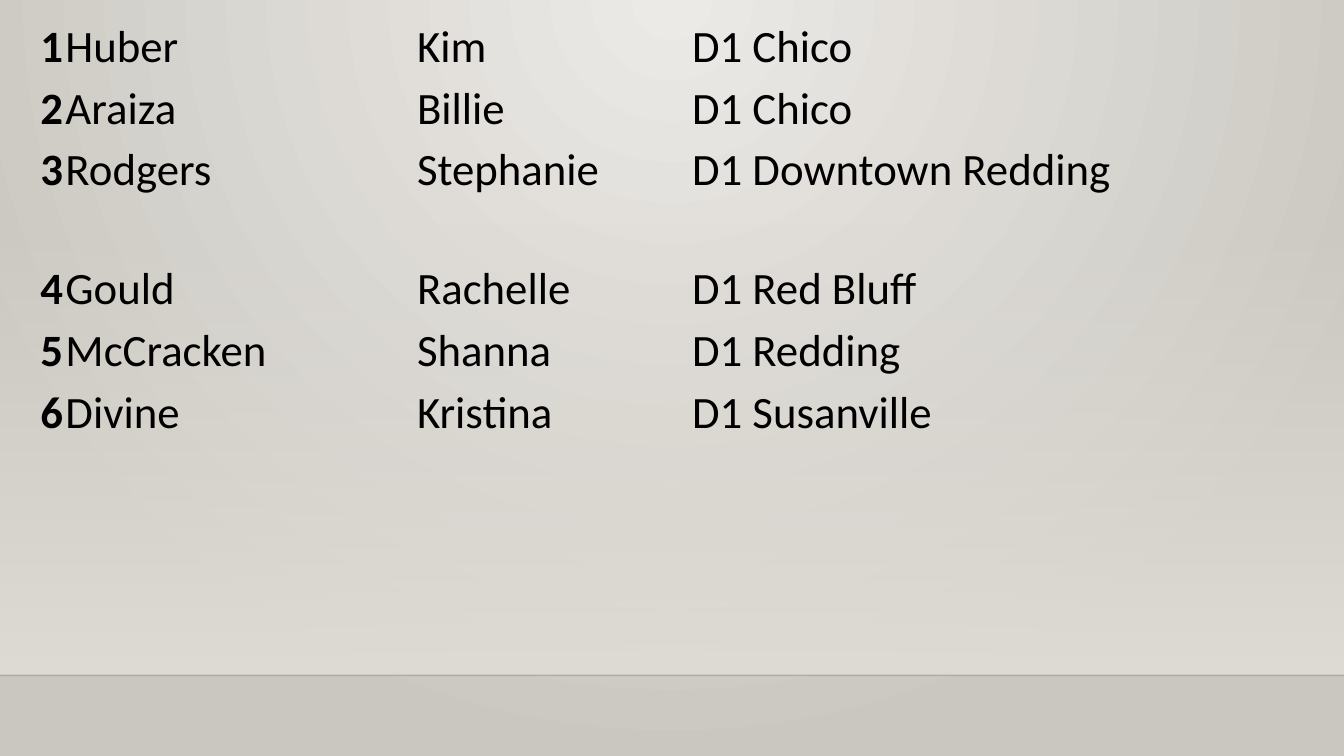
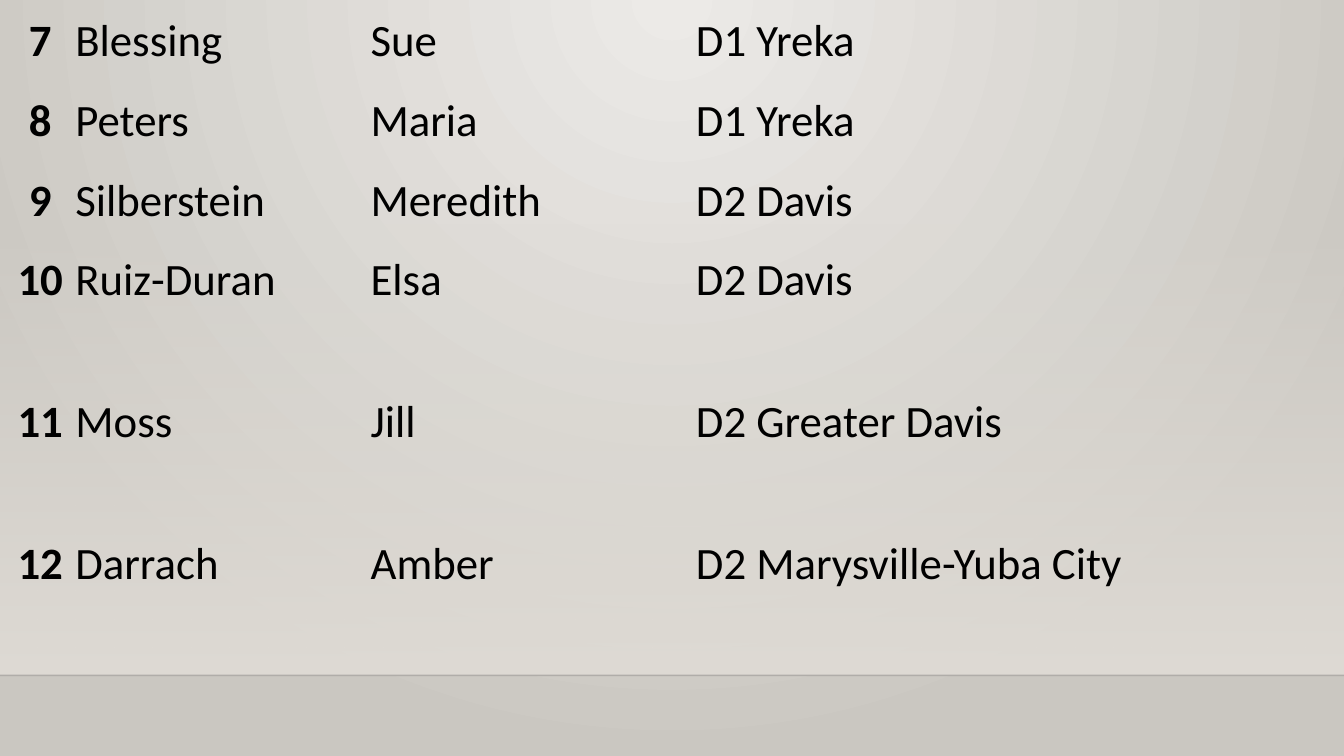
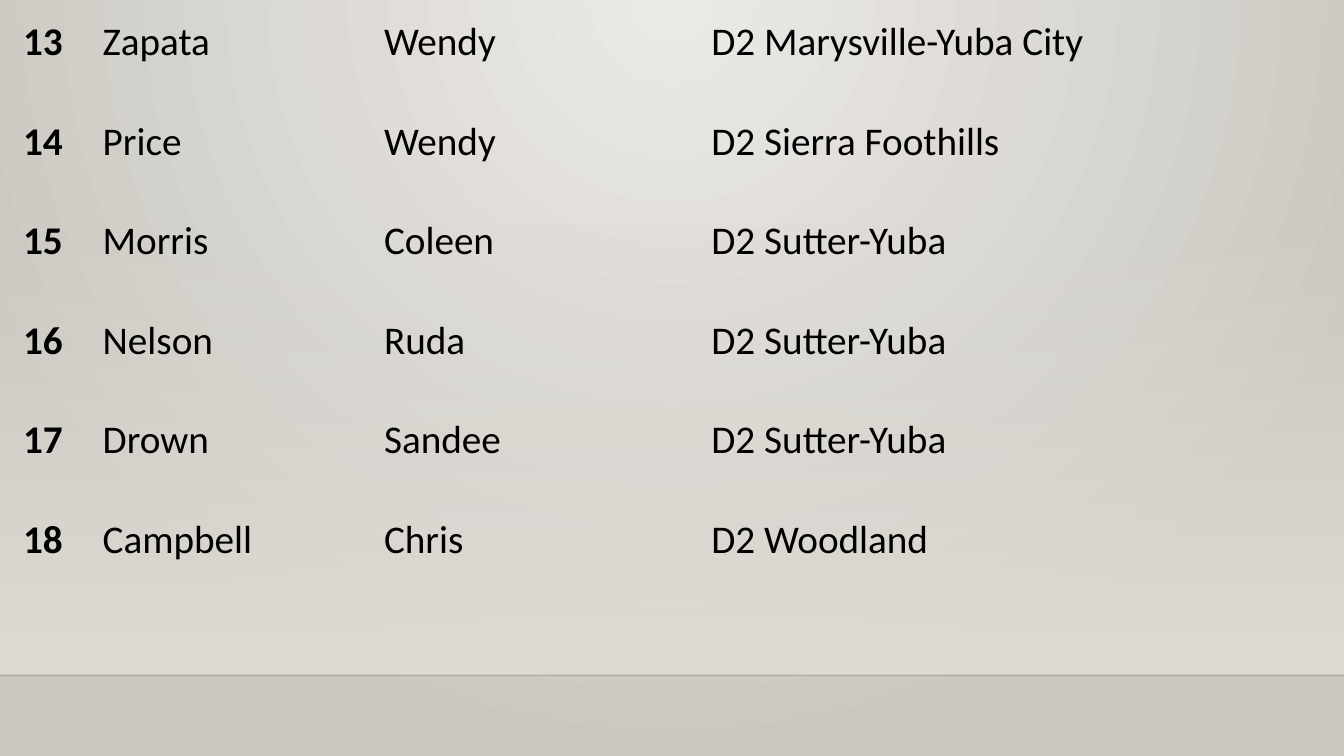
"""Roster of names and districts on three slides over a shared softly lit backdrop."""
from lxml.etree import SubElement
from pptx import Presentation
from pptx.dml.color import RGBColor
from pptx.enum.shapes import MSO_CONNECTOR, MSO_SHAPE
from pptx.enum.text import PP_ALIGN
from pptx.oxml.ns import qn
from pptx.util import Cm, Pt

COLORS = {"glow": "ECEAE7", "edge": "CAC7C1", "wall": "DFDBD5",
          "floor_line": "000001", "text": "000000"}
FONT = "Calibri"
WIDTH, HEIGHT = Cm(33.87), Cm(19.05)
WALL_TOP, FLOOR = Cm(5.61), Cm(17.02)
NO_GRID_STYLE = "{2D5ABB26-0587-4C30-8999-92F81FD0307C}"

ROSTERS = [
    {
        "people": [
            ("Huber", "Kim", "D1 Chico"),
            ("Araiza", "Billie", "D1 Chico"),
            ("Rodgers", "Stephanie", "D1 Downtown Redding"),
            ("Gould", "Rachelle", "D1 Red Bluff"),
            ("McCracken", "Shanna", "D1 Redding"),
            ("Divine", "Kristina", "D1 Susanville"),
        ],
        "corner": (0.94, 0.43),
        "columns": [0.63, 8.86, 6.93, 15.42, 1.55],
        "rows": [1.55, 1.55, 3, 1.55, 1.55, 1.73] + [0.89] * 6,
        "inset": 0.08, "size": 32, "number_align": PP_ALIGN.CENTER,
    },
    {
        "people": [
            ("Blessing", "Sue", "D1 Yreka"),
            ("Peters", "Maria", "D1 Yreka"),
            ("Silberstein", "Meredith", "D2 Davis"),
            ("Ruiz-Duran", "Elsa", "D2 Davis"),
            ("Moss", "Jill", "D2 Greater Davis"),
            ("Darrach", "Amber", "D2 Marysville-Yuba City"),
        ],
        "corner": (0.23, 0.25),
        "columns": [1.57, 7.44, 8.2, 12.32, 4.09],
        "rows": [2.01] * 3 + [3.58] * 3,
        "inset": 0.1, "size": 32, "number_align": PP_ALIGN.CENTER,
    },
    {
        "people": [
            ("Zapata", "Wendy", "D2 Marysville-Yuba City"),
            ("Price", "Wendy", "D2 Sierra Foothills"),
            ("Morris", "Coleen", "D2 Sutter-Yuba"),
            ("Nelson", "Ruda", "D2 Sutter-Yuba"),
            ("Drown", "Sandee", "D2 Sutter-Yuba"),
            ("Campbell", "Chris", "D2 Woodland"),
        ],
        "corner": (0.48, 0.36),
        "columns": [2.01, 7.09, 8.25, 10.01, 6.5],
        "rows": [2.51] * 6,
        "inset": 0.1, "size": 28, "number_align": PP_ALIGN.LEFT,
    },
]


def rgb(name):
    return RGBColor.from_string(COLORS[name])


def set_gradient(fill, *names):
    fill.gradient()
    for stop, name in zip(fill.gradient_stops, names):
        stop.color.rgb = rgb(name)


def set_alpha(element, percent):
    color = element.find(".//" + qn("a:srgbClr"))
    SubElement(color, qn("a:alpha"), val=str(percent * 1000))


def draw_backdrop(slide):
    set_gradient(slide.background.fill, "glow", "edge")
    gradient = slide.element.find(".//" + qn("a:gradFill"))
    gradient.remove(gradient.find(qn("a:lin")))
    circle = SubElement(gradient, qn("a:path"), path="circle")
    SubElement(circle, qn("a:fillToRect"), l="43000", t="0", r="43000", b="100000")

    wall = slide.shapes.add_shape(MSO_SHAPE.RECTANGLE, 0, WALL_TOP, WIDTH, FLOOR - WALL_TOP)
    wall.shadow.inherit = False
    wall.line.fill.background()
    set_gradient(wall.fill, "wall", "wall")
    wall.fill.gradient_angle = 270
    set_alpha(wall.element, 0)

    floor_line = slide.shapes.add_connector(MSO_CONNECTOR.STRAIGHT, 0, FLOOR, WIDTH, FLOOR)
    floor_line.line.color.rgb = rgb("floor_line")
    floor_line.line.width = Pt(1)
    set_alpha(floor_line.element, 20)
    SubElement(floor_line.element.spPr, qn("a:effectLst"))


def write_cell(cell, text, size, bold, align):
    paragraph = cell.text_frame.paragraphs[0]
    paragraph.alignment = align
    run = paragraph.add_run()
    run.text = text
    run.font.name = FONT
    run.font.size = Pt(size)
    run.font.bold = bold
    run.font.color.rgb = rgb("text")


def draw_roster(slide, roster, first_number):
    columns, rows = roster["columns"], roster["rows"]
    left, top = roster["corner"]
    frame = slide.shapes.add_table(len(rows), len(columns), Cm(left), Cm(top),
                                   Cm(sum(columns)), Cm(sum(rows)))
    table = frame.table
    table.first_row = table.horz_banding = False
    frame.element.find(".//" + qn("a:tableStyleId")).text = NO_GRID_STYLE
    for column, width in zip(table.columns, columns):
        column.width = Cm(width)
    for row, height in zip(table.rows, rows):
        row.height = Cm(height)
    for cell in table.iter_cells():
        cell.fill.background()
        cell.margin_left = cell.margin_right = Cm(roster["inset"])
        cell.margin_top = cell.margin_bottom = Cm(roster["inset"])
    for index, person in enumerate(roster["people"]):
        entries = (str(first_number + index), *person)
        for position, text in enumerate(entries):
            is_number = position == 0
            align = roster["number_align"] if is_number else PP_ALIGN.LEFT
            write_cell(table.cell(index, position), text, roster["size"], is_number, align)


def main():
    prs = Presentation()
    prs.slide_width, prs.slide_height = WIDTH, HEIGHT
    number = 1
    for roster in ROSTERS:
        slide = prs.slides.add_slide(prs.slide_layouts[6])
        draw_backdrop(slide)
        draw_roster(slide, roster, number)
        number += len(roster["people"])
    prs.save("out.pptx")


if __name__ == "__main__":
    main()
